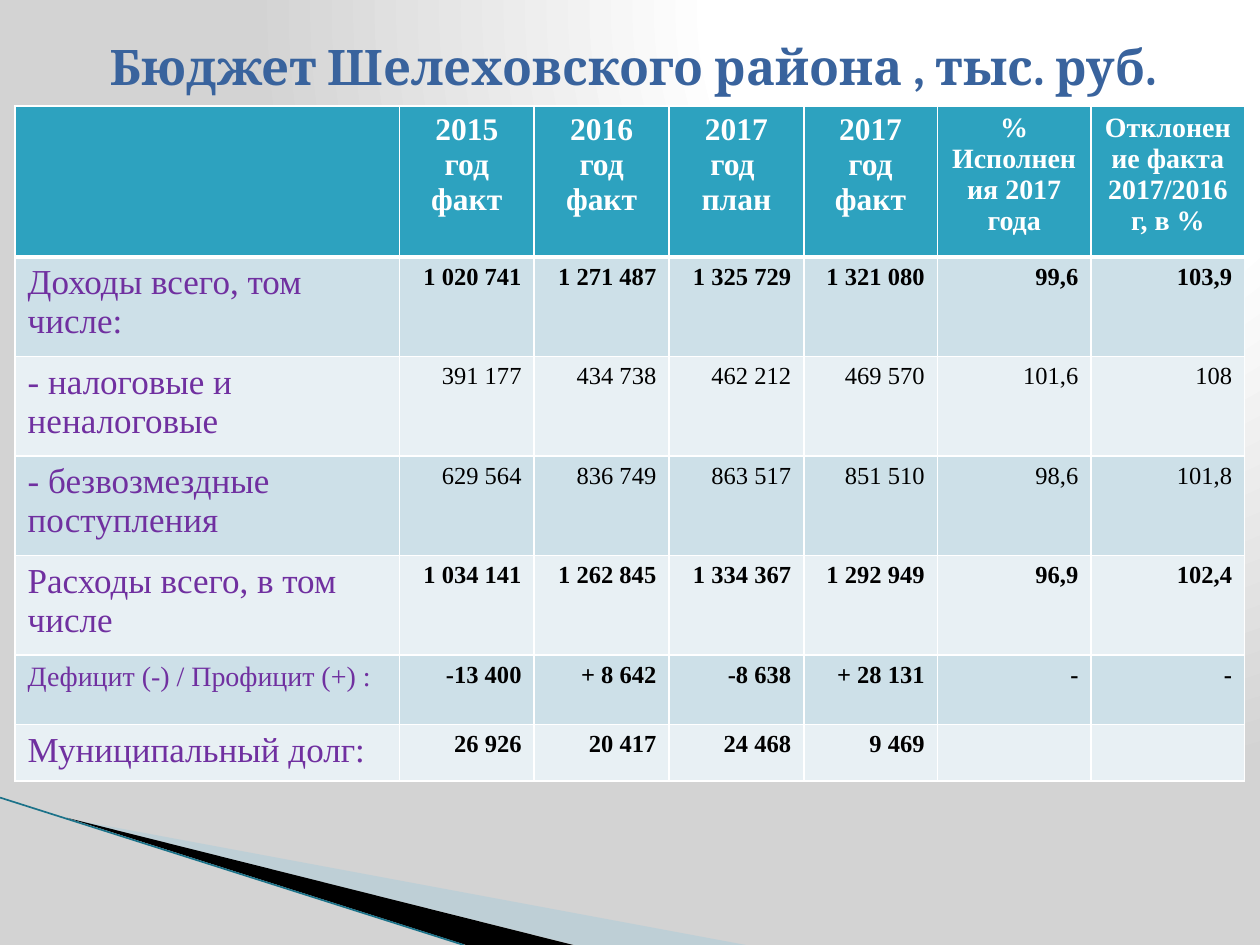
from lxml.etree import SubElement
from pptx import Presentation
from pptx.dml.color import RGBColor
from pptx.enum.shapes import MSO_CONNECTOR as Link
from pptx.enum.text import MSO_ANCHOR as Anchor, PP_ALIGN as Align
from pptx.oxml import parse_xml
from pptx.oxml.ns import nsdecls, qn
from pptx.util import Inches, Pt

WHITE = RGBColor(0xFF, 0xFF, 0xFF)
BLACK = RGBColor(0, 0, 0)
NAVY = RGBColor(0x39, 0x63, 0x9D)
PURPLE = RGBColor(0x70, 0x30, 0xA0)
TEAL = RGBColor(0x2D, 0xA2, 0xBF)
DEEP = RGBColor(0x1B, 0x72, 0x89)
SKY = RGBColor(0xA0, 0xCB, 0xDC)
BANDS = RGBColor(0xCD, 0xE0, 0xE8), RGBColor(0xE8, 0xF0, 0xF4)
SERIF = "Times New Roman"

BACK = f"""<p:bg {nsdecls("p", "a")}><p:bgPr><a:gradFill rotWithShape="1"><a:gsLst>
<a:gs pos="0"><a:srgbClr val="FFFFFF"/></a:gs>
<a:gs pos="40000"><a:srgbClr val="FFFFFF"/></a:gs>
<a:gs pos="100000"><a:srgbClr val="D3D3D3"/></a:gs>
</a:gsLst><a:path path="circle"><a:fillToRect l="65000" b="98000"/></a:path>
</a:gradFill><a:effectLst/></p:bgPr></p:bg>"""

COLS = [3.05, 1.07, 1.07, 1.07, 1.06, 1.22, 1.22]
ROWS = [1.2, 0.79, 0.79, 0.79, 0.79, 0.55, 0.45]
HEADS = ["", "2015 год факт", "2016 год факт", "2017 год \nплан", "2017 год\nфакт",
         "% Исполнения 2017 года", "Отклонение факта 2017/2016 г, в %"]
# label, label size, bold values, values
LINES = [
    ("Доходы всего, том числе:", 20, True,
     ["1 020 741", "1 271 487", "1 325 729", "1 321 080", "99,6", "103,9"]),
    ("- налоговые и неналоговые", 20, False,
     ["391 177", "434 738", "462 212", "469 570", "101,6", "108"]),
    ("- безвозмездные поступления", 20, False,
     ["629 564", "836 749", "863 517", "851 510", "98,6", "101,8"]),
    ("Расходы всего, в том числе", 20, True,
     ["1 034 141", "1 262 845", "1 334 367", "1 292 949", "96,9", "102,4"]),
    ("Дефицит (-) / Профицит (+) :", 16, True,
     ["-13 400", "+ 8 642", "-8 638", "+ 28 131", "-", "-"]),
    ("Муниципальный долг:", 20, True,
     ["26 926", "20 417", "24 468", "9 469", "", ""]),
]


def write(frame, text, size=14, color=BLACK, bold=False, font=SERIF, align=Align.LEFT):
    frame.text = text
    for para in frame.paragraphs:
        para.alignment = align
        for run in para.runs:
            run.font.name = font
            run.font.size = Pt(size)
            run.font.bold = bold
            run.font.color.rgb = color


def add_wedge(slide, points, color, alpha=None):
    """Draw a filled outline; alpha is its opacity in percent."""
    spots = [(Inches(x), Inches(y)) for x, y in points]
    pen = slide.shapes.build_freeform(*spots[0])
    pen.add_line_segments(spots[1:])
    shape = pen.convert_to_shape()
    shape.shadow.inherit = False
    shape.line.fill.background()
    shape.fill.solid()
    shape.fill.fore_color.rgb = color
    if alpha:
        tint = shape.fill._xPr.find(".//" + qn("a:srgbClr"))
        SubElement(tint, qn("a:alpha"), val=str(alpha * 1000))


def add_line(slide, start, end):
    ends = [Inches(v) for v in (*start, *end)]
    line = slide.shapes.add_connector(Link.STRAIGHT, *ends)
    line.line.color.rgb = DEEP
    line.line.width = Pt(0.95)
    SubElement(line._element.spPr, qn("a:effectLst"))


def fill_cell(cell, fill, text, **style):
    cell.fill.solid()
    cell.fill.fore_color.rgb = fill
    write(cell.text_frame, text, **style)


def edge_cell(cell, **widths):
    """Give the cell white borders; keys are sides in the order L, R, T, B."""
    props = cell._tc.get_or_add_tcPr()
    for i, (side, width) in enumerate(widths.items()):
        props.insert(i, parse_xml(
            f'<a:ln{side} {nsdecls("a")} w="{Pt(width)}"><a:solidFill>'
            f'<a:srgbClr val="{WHITE}"/></a:solidFill></a:ln{side}>'))


def add_budget(slide):
    table = slide.shapes.add_table(
        len(ROWS), len(COLS), Inches(0.12), Inches(0.84),
        Inches(sum(COLS)), Inches(sum(ROWS))).table
    for col, width in zip(table.columns, COLS):
        col.width = Inches(width)
    for row, height in zip(table.rows, ROWS):
        row.height = Inches(height)
    for c, head in enumerate(HEADS):
        cell = table.cell(0, c)
        fill_cell(cell, TEAL, head, size=18 if c < 5 else 16,
                  color=WHITE, bold=True, align=Align.CENTER)
        edge_cell(cell, L=1, R=1, T=1, B=3)
    for r, (label, size, bold, values) in enumerate(LINES, 1):
        band = BANDS[(r - 1) % 2]
        fill_cell(table.cell(r, 0), band, label, size=size, color=PURPLE)
        for c, value in enumerate(values, 1):
            fill_cell(table.cell(r, c), band, value, bold=bold, align=Align.RIGHT)


def set_title(slide, text):
    title = slide.shapes.title
    title.left, title.top = Inches(0.51), Inches(0.21)
    title.width, title.height = Inches(9.03), Inches(0.63)
    title.text_frame.vertical_anchor = Anchor.MIDDLE
    write(title.text_frame, text, size=28, color=NAVY, bold=True,
          font="Cambria", align=Align.CENTER)


def main():
    deck = Presentation()
    deck.slide_width, deck.slide_height = Inches(10), Inches(7.5)
    slide = deck.slides.add_slide(deck.slide_layouts[5])
    slide._element.cSld.insert(0, parse_xml(BACK))
    add_wedge(slide, [(0.55, 6.5), (5.92, 7.5), (4.56, 7.5)], SKY, alpha=40)
    add_wedge(slide, [(0.53, 6.49), (4.55, 7.5), (3.7, 7.5)], BLACK)
    add_line(slide, (0, 6.33), (3.68, 7.5))
    add_budget(slide)
    set_title(slide, "Бюджет Шелеховского района , тыс. руб.")
    deck.save("out.pptx")


if __name__ == "__main__":
    main()
